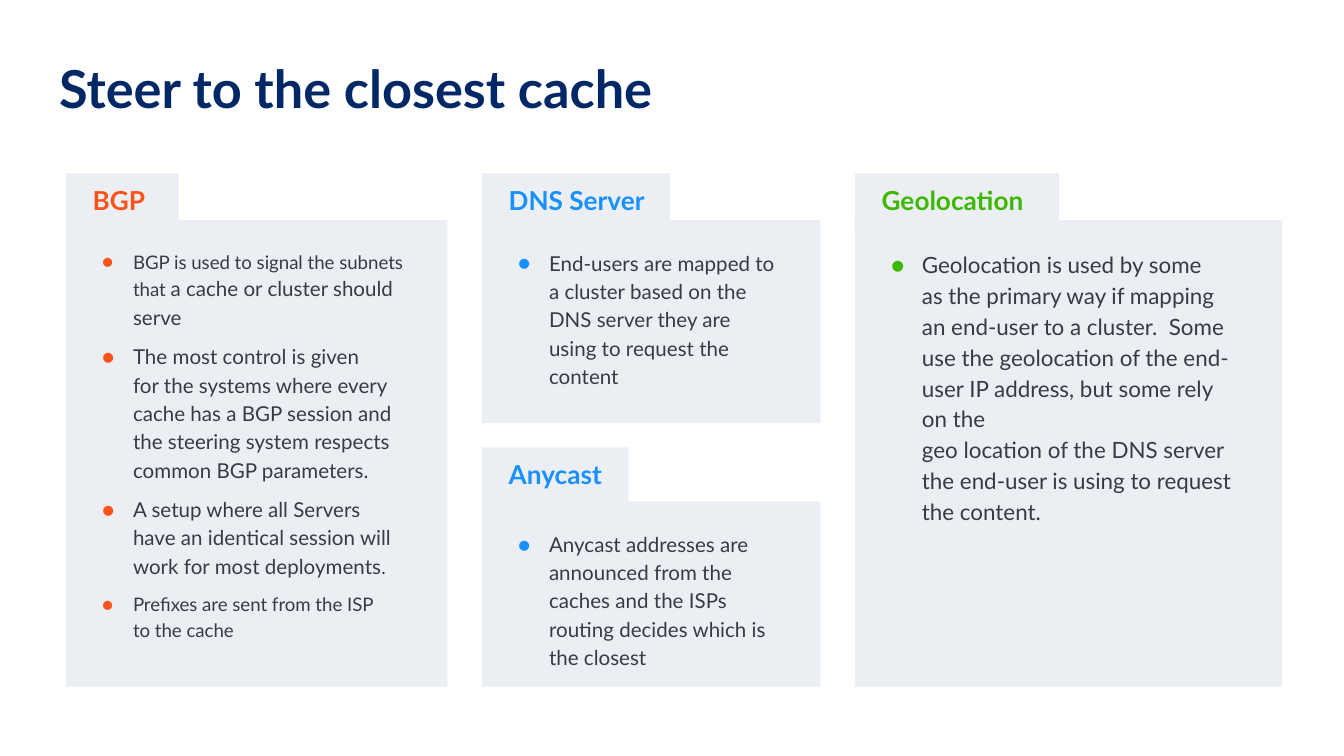
from copy import deepcopy

from lxml.etree import SubElement
from pptx import Presentation
from pptx.dml.color import RGBColor
from pptx.enum.shapes import MSO_SHAPE
from pptx.enum.text import MSO_ANCHOR, MSO_AUTO_SIZE, PP_ALIGN
from pptx.oxml.ns import qn
from pptx.util import Inches, Pt

NAVY = RGBColor(0x00, 0x27, 0x66)
PANEL = RGBColor(0xEB, 0xEF, 0xF3)
INK = RGBColor(0x39, 0x3A, 0x45)
ORANGE = RGBColor(0xFA, 0x54, 0x1C)
BLUE = RGBColor(0x18, 0x90, 0xFF)
GREEN = RGBColor(0x3D, 0xB8, 0x00)
FONT = "Lato"

# Grid in inches on a 16:9 slide: three columns spread evenly between the margins
SLIDE_WIDTH = 10
SLIDE_HEIGHT = SLIDE_WIDTH * 9 / 16
LEFT, RIGHT = 0.49, 9.54
COLUMN_WIDTHS = [2.84, 2.52, 3.18]
GAP = (RIGHT - LEFT - sum(COLUMN_WIDTHS)) / (len(COLUMN_WIDTHS) - 1)
COLUMN_LEFTS = [LEFT + sum(COLUMN_WIDTHS[:i]) + i * GAP for i in range(len(COLUMN_WIDTHS))]
TOP, UPPER_BOTTOM, LOWER_TOP, BOTTOM = 1.29, 3.15, 3.33, 5.11
TAB_HEIGHT = 0.4
HANGING, BULLET_OFFSET = 0.3, -0.23

# Cards: column, top, bottom, tab width, tab share above the panel, colour, heading,
# bullets; each bullet is a list of (text, size) runs
CARDS = [
    (0, TOP, BOTTOM, 0.84, 0.87, ORANGE, "BGP", [
        [("BGP is used to signal the subnets that ", 10),
         ("a cache or cluster should serve", 11)],
        [("The most control is given \nfor the systems where every cache has a BGP session "
          "and the steering system respects common BGP parameters.", 11)],
        [("A setup where all Servers have an identical session will work for most "
          "deployments", 11), (".", 10)],
        [("Prefixes are sent from the ISP \nto the cache", 10)],
    ]),
    (1, TOP, UPPER_BOTTOM, 1.4, 0.87, BLUE, "DNS Server", [
        [("End-users are mapped to a cluster based on the DNS server they are using to "
          "request the content", 11)],
    ]),
    (2, TOP, BOTTOM, 1.52, 0.87, GREEN, "Geolocation", [
        [("Geolocation is used by some \nas the primary way if mapping an end-user to a "
          "cluster.  Some use the geolocation of the end-user IP address, but some rely on "
          "the \ngeo location of the DNS server the end-user is using to request the "
          "content.", 12)],
    ]),
    (1, LOWER_TOP, BOTTOM, 1.09, 1, BLUE, "Anycast", [
        [("Anycast addresses are announced from the caches and the ISPs routing decides "
          "which is the closest", 11)],
    ]),
]


def set_attributes(target, values):
    for name, value in values.items():
        setattr(target, name, value)


def set_frame(frame, anchor, left=0.1, top=0.1, right=0.1, bottom=0.1):
    set_attributes(frame, {
        "word_wrap": True, "auto_size": MSO_AUTO_SIZE.NONE, "vertical_anchor": anchor,
        "margin_left": Inches(left), "margin_top": Inches(top),
        "margin_right": Inches(right), "margin_bottom": Inches(bottom),
    })


def add_run(paragraph, text, size, colour, bold=False):
    """Add formatted text, with a line break of the same size at each newline."""
    for index, line in enumerate(text.split("\n")):
        if index:
            paragraph.add_line_break()
            paragraph._p[-1].append(deepcopy(run._r.rPr))
        run = paragraph.add_run()
        run.text = line
        set_attributes(run.font, {"name": FONT, "size": Pt(size), "bold": bold})
        run.font.color.rgb = colour


def add_panel(slide, left, top, width, height):
    panel = slide.shapes.add_shape(
        MSO_SHAPE.RECTANGLE, *map(Inches, (left, top, width, height)))
    panel.shadow.inherit = False
    panel.fill.solid()
    panel.fill.fore_color.rgb = PANEL
    panel.line.fill.background()
    return panel.text_frame


def set_bullet(paragraph, colour):
    properties = paragraph._p.get_or_add_pPr()
    properties.set("marL", str(Inches(HANGING)))
    properties.set("indent", str(Inches(BULLET_OFFSET)))
    bullet_colour = SubElement(properties, qn("a:buClr"))
    SubElement(bullet_colour, qn("a:srgbClr"), val=str(colour))
    SubElement(properties, qn("a:buFont"), typeface=FONT)
    SubElement(properties, qn("a:buChar"), char="●")


def add_title(slide, left, top, width, height):
    title = slide.shapes.title
    set_attributes(title, {
        "left": Inches(left), "top": Inches(top),
        "width": Inches(width), "height": Inches(height),
    })
    set_frame(title.text_frame, MSO_ANCHOR.TOP)
    heading = title.text_frame.paragraphs[0]
    heading.alignment = PP_ALIGN.LEFT
    add_run(heading, "Steer to the closest cache", 28, NAVY, bold=True)


def add_card(slide, column, top, bottom, tab_width, tab_share, colour, heading, bullets):
    left, width = COLUMN_LEFTS[column], COLUMN_WIDTHS[column]
    panel_top = top + TAB_HEIGHT * tab_share

    # Body panel with bullets
    body = add_panel(slide, left, panel_top, width, bottom - panel_top)
    set_frame(body, MSO_ANCHOR.TOP, left=0.2, top=0.2, right=0.3)
    for index, runs in enumerate(bullets):
        paragraph = body.add_paragraph() if index else body.paragraphs[0]
        set_attributes(paragraph, {
            "alignment": PP_ALIGN.LEFT, "line_spacing": 1.15,
            "space_before": Pt(6 if index else 0), "space_after": Pt(0),
        })
        set_bullet(paragraph, colour)
        for text, size in runs:
            add_run(paragraph, text, size, INK)

    # Heading tab
    tab = add_panel(slide, left, top, tab_width, TAB_HEIGHT)
    set_frame(tab, MSO_ANCHOR.MIDDLE, left=0.2)
    tab.paragraphs[0].alignment = PP_ALIGN.LEFT
    add_run(tab.paragraphs[0], heading, 14, colour, bold=True)


def main():
    presentation = Presentation()
    presentation.slide_width = Inches(SLIDE_WIDTH)
    presentation.slide_height = Inches(SLIDE_HEIGHT)
    slide = presentation.slides.add_slide(presentation.slide_layouts[5])
    add_title(slide, 0.34, 0.32, SLIDE_WIDTH - 2 * 0.34, 0.63)
    for card in CARDS:
        add_card(slide, *card)
    presentation.save("out.pptx")


if __name__ == "__main__":
    main()
